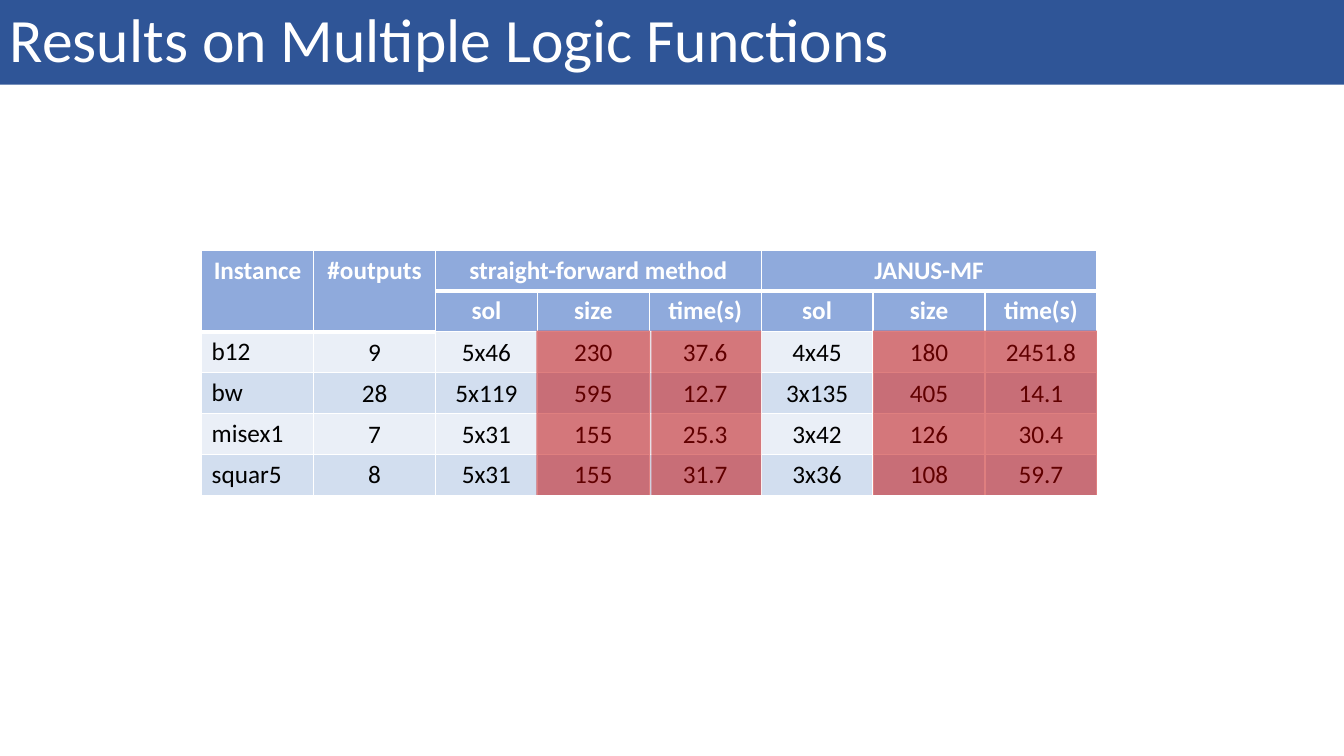
from pptx import Presentation
from pptx.dml.color import RGBColor
from pptx.enum.shapes import MSO_SHAPE
from pptx.enum.text import MSO_ANCHOR, PP_ALIGN
from pptx.oxml import parse_xml
from pptx.oxml.ns import nsdecls
from pptx.util import Inches, Pt

RECT = MSO_SHAPE.RECTANGLE
LEFT, CENTER = PP_ALIGN.LEFT, PP_ALIGN.CENTER
TOP, MIDDLE = MSO_ANCHOR.TOP, MSO_ANCHOR.MIDDLE


def paint(fill, color, alpha=None):
    fill.solid()
    fill.fore_color.rgb = RGBColor.from_string(color)
    if alpha:
        fill._xPr.solidFill[0].append(
            parse_xml(f'<a:alpha {nsdecls("a")} val="{alpha * 1000}"/>'))


def write(tf, text, size=18, color="000000", bold=False, align=LEFT):
    p = tf.paragraphs[0]
    p.alignment = align
    r = p.add_run()
    r.text = text
    r.font.name = "Calibri"
    r.font.size = Pt(size)
    r.font.bold = bold
    paint(r.font.fill, color)
    return p


prs = Presentation()
prs.slide_width, prs.slide_height = Inches(13.33), Inches(7.5)
s = prs.slides.add_slide(prs.slide_layouts[6])

title = s.shapes.add_shape(RECT, 0, 0, prs.slide_width, Inches(0.84))
title.shadow.inherit = False
title.line.fill.background()
paint(title.fill, "2F5597")
title.text_frame.word_wrap = True
title.text_frame.vertical_anchor = MIDDLE
p = write(title.text_frame, "Results on Multiple Logic Functions", 44, "FFFFFF")
p.line_spacing = 0.9

rows = [
    ["Instance", "#outputs", "straight-forward method", "", "", "JANUS-MF", "", ""],
    ["", "", "sol", "size", "time(s)", "sol", "size", "time(s)"],
    ["b12", "9", "5x46", "230", "37.6", "4x45", "180", "2451.8"],
    ["bw", "28", "5x119", "595", "12.7", "3x135", "405", "14.1"],
    ["misex1", "7", "5x31", "155", "25.3", "3x42", "126", "30.4"],
    ["squar5", "8", "5x31", "155", "31.7", "3x36", "108", "59.7"],
]
widths = [1.11, 1.21, 1.01] + [1.11] * 5
row_height = 0.405
frame = s.shapes.add_table(len(rows), len(widths), Inches(2), Inches(2.48),
                           Inches(sum(widths)), Inches(row_height * len(rows)))
table = frame.table
for column, width in zip(table.columns, widths):
    column.width = Inches(width)

for i, row in enumerate(rows):
    table.rows[i].height = Inches(row_height)
    for j, text in enumerate(row):
        cell = table.cell(i, j)
        header = i < 2
        tcPr = cell._tc.get_or_add_tcPr()
        for side in "LRTB":
            thick = (side == "B" and (i == 0 or i == 1 and j < 2)
                     or side == "T" and (i == 1 and j > 1 or i == 2 and j < 2))
            tcPr.append(parse_xml(
                f'<a:ln{side} {nsdecls("a")} w="{Pt(3 if thick else 1)}"><a:solidFill>'
                f'<a:srgbClr val="FFFFFF"/></a:solidFill></a:ln{side}>'))
        paint(cell.fill, "8FAADC" if header else ("EAEFF7", "D2DEEF")[i % 2])
        cell.vertical_anchor = TOP if header or j == 0 else MIDDLE
        if not header and j > 0:
            cell.margin_left = cell.margin_right = cell.margin_top = Inches(0.01)
            cell.margin_bottom = 0
        if text:
            write(cell.text_frame, text, color="FFFFFF" if header else "000000",
                  bold=header, align=CENTER if header or j > 0 else LEFT)

for j in (0, 1):
    table.cell(0, j).merge(table.cell(1, j))
for j in (2, 5):
    table.cell(0, j).merge(table.cell(0, j + 2))

for x, width in [(5.32, 1.13), (8.66, 1.13), (6.46, 1.09), (9.79, 1.09)]:
    highlight = s.shapes.add_shape(RECT, Inches(x), Inches(3.28), Inches(width), Inches(1.63))
    highlight.shadow.inherit = False
    highlight.line.fill.background()
    paint(highlight.fill, "C00000", alpha=50)

prs.save("out.pptx")
